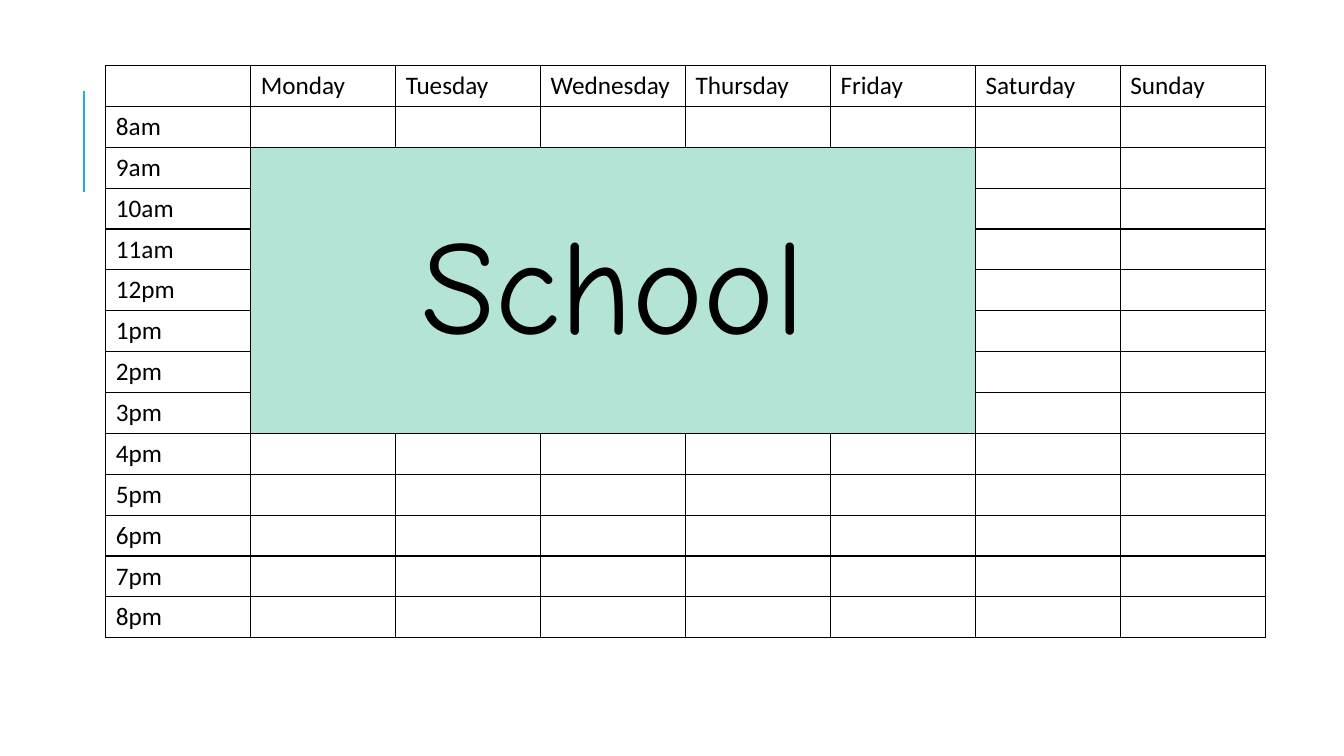
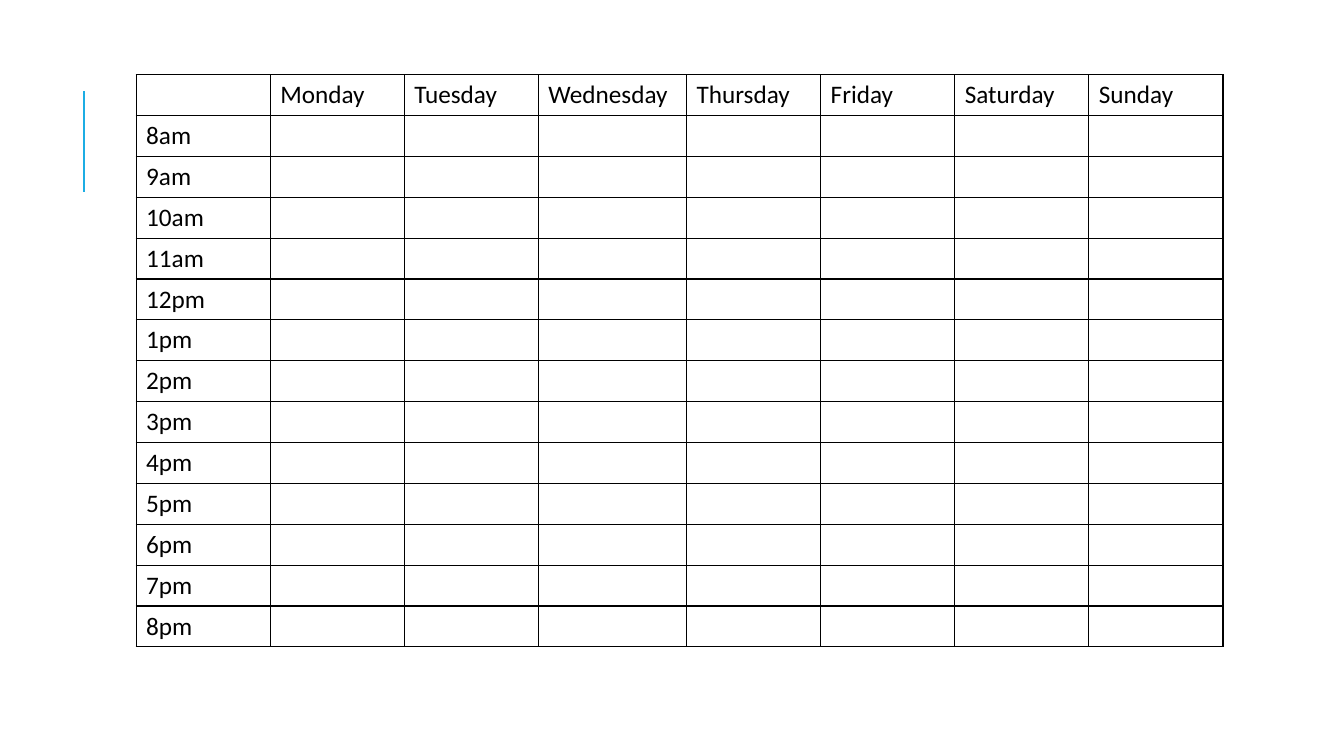
from lxml.etree import SubElement
from pptx import Presentation
from pptx.dml.color import RGBColor
from pptx.enum.shapes import MSO_CONNECTOR
from pptx.enum.text import MSO_ANCHOR, PP_ALIGN
from pptx.oxml.ns import qn
from pptx.util import Inches, Pt

INK = "000000"
ACCENT = "1CADE4"
MINT = "B3E4D6"
DAYS = ["Monday", "Tuesday", "Wednesday", "Thursday", "Friday", "Saturday", "Sunday"]
HOURS = ["8am", "9am", "10am", "11am", "12pm", "1pm", "2pm",
         "3pm", "4pm", "5pm", "6pm", "7pm", "8pm"]
HEIGHT = 5.68


def put(cell, text, size=18, font="Calibri", align=PP_ALIGN.LEFT):
    para = cell.text_frame.paragraphs[0]
    para.alignment = align
    run = para.add_run()
    run.text = text
    run.font.size = Pt(size)
    run.font.name = font
    run.font.color.rgb = RGBColor.from_string(INK)


def frame(cell):
    """Give a cell thin borders on all sides and no fill."""
    props = cell._tc.get_or_add_tcPr()
    for side in ("lnL", "lnR", "lnT", "lnB"):
        line = SubElement(props, qn(f"a:{side}"), w=str(Pt(1)))
        fill = SubElement(line, qn("a:solidFill"))
        SubElement(fill, qn("a:srgbClr"), val=INK)
    cell.fill.background()


deck = Presentation()
deck.slide_width = Inches(13.33)
deck.slide_height = Inches(7.5)
layout = deck.slide_layouts[6]

# Left, top, width, Wednesday's width
plans = [(1.05, 0.65, 11.5, 11.5 / 8), (1.35, 0.74, 10.78, 1.47)]
grids = []
for left, top, width, wide in plans:
    slide = deck.slides.add_slide(layout)
    grid = slide.shapes.add_table(
        len(HOURS) + 1, len(DAYS) + 1,
        Inches(left), Inches(top), Inches(width), Inches(HEIGHT)).table
    grid.first_row = False
    grid.horz_banding = False
    for column in grid.columns:
        column.width = Inches((width - wide) / len(DAYS))
    grid.columns[DAYS.index("Wednesday") + 1].width = Inches(wide)
    for cell in grid.iter_cells():
        frame(cell)
    for col, day in enumerate(DAYS, 1):
        put(grid.cell(0, col), day)
    for row, hour in enumerate(HOURS, 1):
        put(grid.cell(row, 0), hour)
    grids.append(grid)

# School block: Monday to Friday, 9am to 3pm
week = grids[0]
school = week.cell(HOURS.index("9am") + 1, DAYS.index("Monday") + 1)
school.merge(week.cell(HOURS.index("3pm") + 1, DAYS.index("Friday") + 1))
school.fill.solid()
school.fill.fore_color.rgb = RGBColor.from_string(MINT)
school.vertical_anchor = MSO_ANCHOR.MIDDLE
put(school, "School", size=96, font="Comic Neue", align=PP_ALIGN.CENTER)

# The accent line moves to the layout, so both slides share it
accent = deck.slides[0].shapes.add_connector(
    MSO_CONNECTOR.STRAIGHT, Inches(0.83), Inches(1.9), Inches(0.83), Inches(0.9))
accent.line.color.rgb = RGBColor.from_string(ACCENT)
accent.line.width = Pt(1.5)
SubElement(accent.element.spPr, qn("a:effectLst"))
layout.element.cSld.spTree.append(accent.element)

deck.save("out.pptx")
